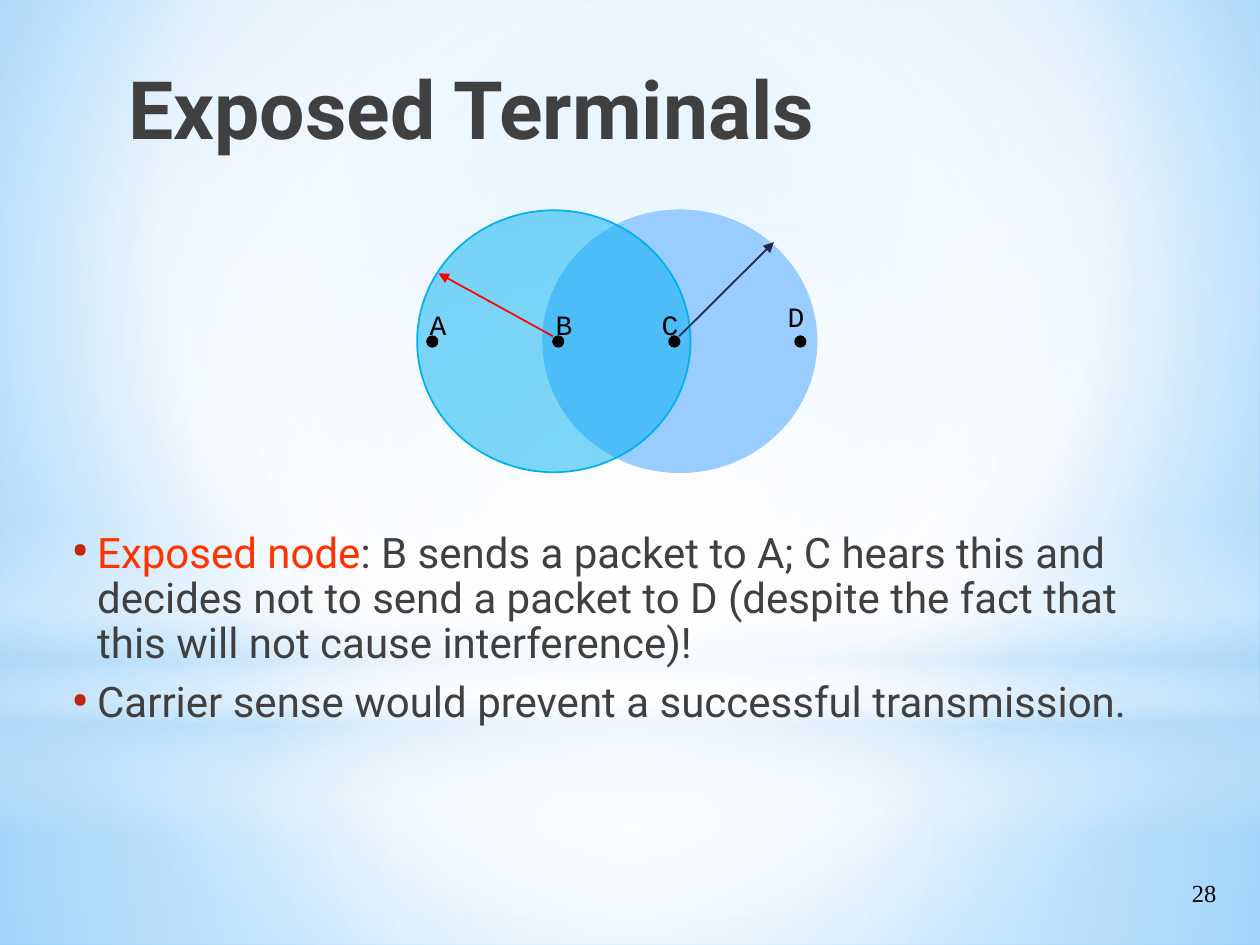
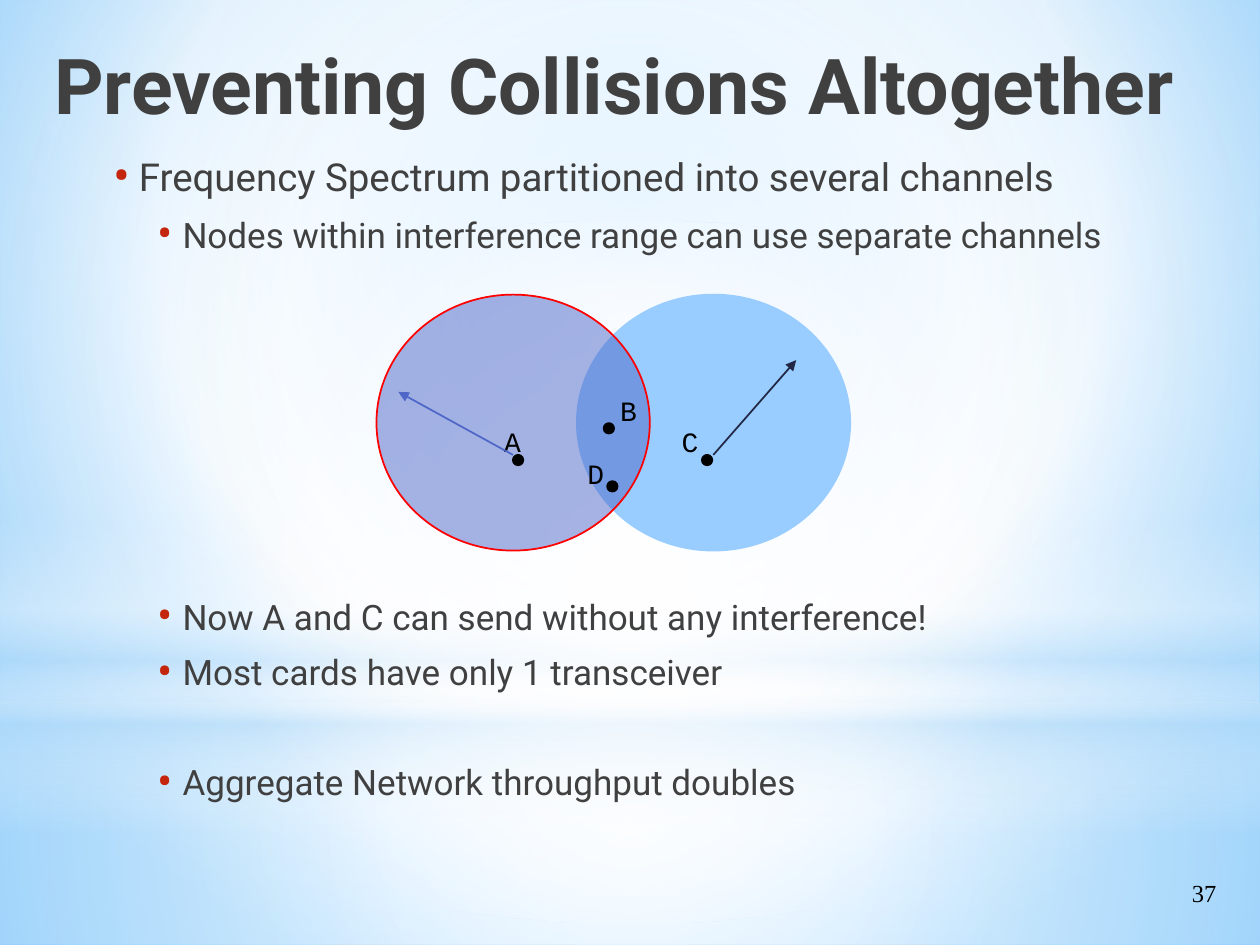
"""Build two slides on exposed terminals and channel partitioning."""
import pptx
import pptx.util
import pptx.dml.color
import pptx.enum.shapes
import pptx.oxml
import pptx.oxml.ns
import lxml.etree

Cm, Pt = pptx.util.Cm, pptx.util.Pt
RGB = pptx.dml.color.RGBColor
SHAPE = pptx.enum.shapes.MSO_SHAPE
qn = pptx.oxml.ns.qn

BLACK, RED = RGB(0, 0, 0), RGB(0xFF, 0, 0)
WHITE, PALE = RGB(0xFF, 0xFF, 0xFF), RGB(0xB4, 0xDC, 0xFA)
SKY, AZURE = RGB(0x9E, 0xD5, 0xFF), RGB(0x5B, 0xB9, 0xFF)
GREY, ORANGE, BULLET = RGB(0x40, 0x40, 0x40), RGB(0xFF, 0x33, 0), RGB(0xC3, 0x26, 0x0C)
NAVY, INDIGO = RGB(0x21, 0x27, 0x45), RGB(0x4E, 0x67, 0xC8)
CYAN, LIGHT_BLUE = RGB(0, 0xB0, 0xF0), RGB(0x99, 0xCC, 0xFF)

BACKGROUND = [(0, SKY, 100), (60, WHITE, 100), (100, AZURE, 100)]
FOCUS, CENTRE = (20, 10, 20, 60), (50, 50, 50, 50)
BANDS = [
    (SHAPE.RECTANGLE, (0, 14.17, 25.4, 4.88),
     [(0, WHITE, 91), (37, WHITE, 76), (100, PALE, 79)], CENTRE),
    (SHAPE.RECTANGLE, (0, 0, 25.4, 14.17),
     [(0, WHITE, 89), (48, WHITE, 62), (100, PALE, 79)], CENTRE),
    (SHAPE.RECTANGLE, (0, 10.46, 25.4, 6.35),
     [(0, WHITE, 0), (29, WHITE, 30), (45, PALE, 40), (55, WHITE, 26),
      (65, PALE, 60), (100, WHITE, 0)], None),
    (SHAPE.OVAL, (0, 4.45, 25.4, 14.17), [(0, WHITE, 100), (56, WHITE, 0)], CENTRE),
]
NUMBER_BOX = (22.23, 17.58, 2.54, 1.07)
DOT, LABEL = 0.21, 0.9
INDENTS, HANG = (0.64, 1.52), -0.51
SPACE_BEFORE, SPACE_AFTER, SKIPPED_LINE = 4.7, 3, 31.1

SLIDES = [
    {
        "title": ("Exposed Terminals", 46, (2.34, 1.07, 20.09, 1.9)),
        "number": "28",
        "body": (1.07, 10.6, 22.22, 6.5),
        "line_spacing": 0.9,
        "points": [
            (0, 24, 0, [("Exposed node", ORANGE),
                        (": B sends a packet to A; C hears this and decides not to send a packet "
                         "to D (despite the fact that this will not cause interference)!", GREY)]),
            (0, 24, 0, [("Carrier sense would prevent a successful transmission.", GREY)]),
        ],
        "range_size": (5.51, 5.28),
        "ranges": [((10.95, 4.24), LIGHT_BLUE, 100, LIGHT_BLUE), ((8.41, 4.24), CYAN, 50, CYAN)],
        "nodes": [("A", (8.61, 6.78), (8.38, 6.07)), ("B", (11.15, 6.78), (10.92, 6.07)),
                  ("C", (13.49, 6.78), (13.06, 6.07)), ("D", (16.03, 6.78), (15.6, 5.92))],
        "arrows": [((13.69, 6.78), (15.6, 4.88), NAVY), ((11.15, 6.78), (8.84, 5.51), RED)],
    },
    {
        "title": ("Preventing Collisions Altogether", 44, (0.84, 0.64, 24.56, 1.9)),
        "number": "37",
        "body": (1.91, 2.97, 23.49, 15.67),
        "line_spacing": 1.0,
        "points": [
            (0, 22, 0, [("Frequency Spectrum partitioned into several channels", GREY)]),
            (1, 20, 0, [("Nodes within interference range can use separate channels", GREY)]),
            (1, 20, 6, [("Now A and C can send without any interference!", GREY)]),
            (1, 20, 0, [("Most cards have only 1 transceiver", GREY)]),
            (1, 20, 1, [("Aggregate Network throughput doubles", GREY)]),
        ],
        "range_size": (5.51, 5.16),
        "ranges": [((11.63, 5.94), LIGHT_BLUE, 100, LIGHT_BLUE), ((7.59, 5.94), INDIGO, 50, RED)],
        "nodes": [("A", (10.34, 9.17), (9.88, 8.43)), ("B", (12.17, 8.53), (12.22, 7.8)),
                  ("C", (14.15, 9.17), (13.46, 8.43)), ("D", (12.24, 9.7), (11.56, 9.07))],
        "arrows": [((14.38, 9.17), (16.05, 7.26), NAVY), ((10.34, 9.17), (8.03, 7.9), INDIGO)],
    },
]


def cm(values):
    return [Cm(v) for v in values]


def add_xml(parent, tag, **attrs):
    return lxml.etree.SubElement(parent, qn(tag), {k: str(v) for k, v in attrs.items()})


def set_gradient(fill, holder, stops, focus):
    """Fill with stops, radially around focus or straight down without one."""
    fill.gradient()
    grad = holder.find(qn("a:gradFill"))
    for child in list(grad):
        grad.remove(child)
    stop_list = add_xml(grad, "a:gsLst")
    for pos, color, alpha in stops:
        stop = add_xml(stop_list, "a:gs", pos=pos * 1000)
        add_xml(add_xml(stop, "a:srgbClr", val=color), "a:alpha", val=alpha * 1000)
    if focus:
        sides = {side: v * 1000 for side, v in zip("ltrb", focus)}
        add_xml(add_xml(grad, "a:path", path="circle"), "a:fillToRect", **sides)
    else:
        add_xml(grad, "a:lin", ang=5400000, scaled=0)


def add_shape(slide, kind, box):
    sp = slide.shapes.add_shape(kind, *cm(box))
    sp.shadow.inherit = False
    return sp


def add_ellipse(slide, box, color, alpha, line):
    sp = add_shape(slide, SHAPE.OVAL, box)
    sp.fill.solid()
    sp.fill.fore_color.rgb = color
    if alpha < 100:
        clr = sp._element.spPr.find(qn("a:solidFill"))[0]
        add_xml(clr, "a:alpha", val=alpha * 1000)
    sp.line.color.rgb = line
    sp.line.width = Pt(1)


def add_arrow(slide, start, end, color):
    line = slide.shapes.add_connector(
        pptx.enum.shapes.MSO_CONNECTOR.STRAIGHT, *cm(start + end))
    line.line.color.rgb = color
    line.line.width = Pt(1)
    add_xml(line.line._get_or_add_ln(), "a:tailEnd", type="triangle")
    add_xml(line._element.spPr, "a:effectLst")


def add_text(slide, box, text, font, size, color, align=None, bold=False, wrap=True):
    tf = slide.shapes.add_textbox(*cm(box)).text_frame
    tf.word_wrap = wrap
    p = tf.paragraphs[0]
    p.text = text
    p.alignment = align
    set_font(p.font, font, size, bold)
    p.font.color.rgb = color


def set_font(font, name, size, bold=False):
    font.name, font.size, font.bold = name, Pt(size), bold


def add_points(slide, box, points, line_spacing):
    tf = slide.shapes.add_textbox(*cm(box)).text_frame
    tf.word_wrap = True
    for i, (level, size, skipped, runs) in enumerate(points):
        p = tf.add_paragraph() if i else tf.paragraphs[0]
        p.level = level
        p.line_spacing = line_spacing
        p.space_before = Pt(SPACE_BEFORE + skipped * SKIPPED_LINE)
        p.space_after = Pt(SPACE_AFTER)
        pPr = p._p.get_or_add_pPr()
        pPr.set("marL", str(Cm(INDENTS[level])))
        pPr.set("indent", str(Cm(HANG)))
        add_xml(add_xml(pPr, "a:buClr"), "a:srgbClr", val=BULLET)
        add_xml(pPr, "a:buSzPct", val=130000)
        add_xml(pPr, "a:buFont", typeface="Roboto")
        add_xml(pPr, "a:buChar", char="•")
        set_font(p.font, "Roboto", size)
        for text, color in runs:
            r = p.add_run()
            r.text = text
            r.font.color.rgb = color


def add_diagram(slide, content):
    for corner, color, alpha, line in content["ranges"]:
        add_ellipse(slide, corner + content["range_size"], color, alpha, line)
    for _, corner, _ in content["nodes"]:
        add_ellipse(slide, corner + (DOT, DOT), BLACK, 100, BLACK)
    for name, _, corner in content["nodes"]:
        add_text(slide, corner + (LABEL, LABEL), name, "Courier New", 16, BLACK,
                 pptx.enum.text.PP_ALIGN.CENTER, wrap=False)
    for arrow in content["arrows"]:
        add_arrow(slide, *arrow)


def add_slide(prs, content):
    slide = prs.slides.add_slide(prs.slide_layouts[6])
    for kind, box, stops, focus in BANDS:
        sp = add_shape(slide, kind, box)
        set_gradient(sp.fill, sp._element.spPr, stops, focus)
        sp.line.fill.background()
    title, size, box = content["title"]
    add_text(slide, box, title, "Roboto", size, GREY, bold=True)
    add_points(slide, content["body"], content["points"], content["line_spacing"])
    add_text(slide, NUMBER_BOX, content["number"], "Times New Roman", 14, BLACK,
             pptx.enum.text.PP_ALIGN.RIGHT)
    add_diagram(slide, content)


def main():
    prs = pptx.Presentation()
    prs.slide_width, prs.slide_height = cm((25.4, 19.05))
    fill = prs.slide_master.background.fill
    fill.solid()
    holder = prs.slide_master._element.cSld.find(qn("p:bg")).find(qn("p:bgPr"))
    set_gradient(fill, holder, BACKGROUND, FOCUS)
    for content in SLIDES:
        add_slide(prs, content)
    prs.save("out.pptx")


if __name__ == "__main__":
    main()
